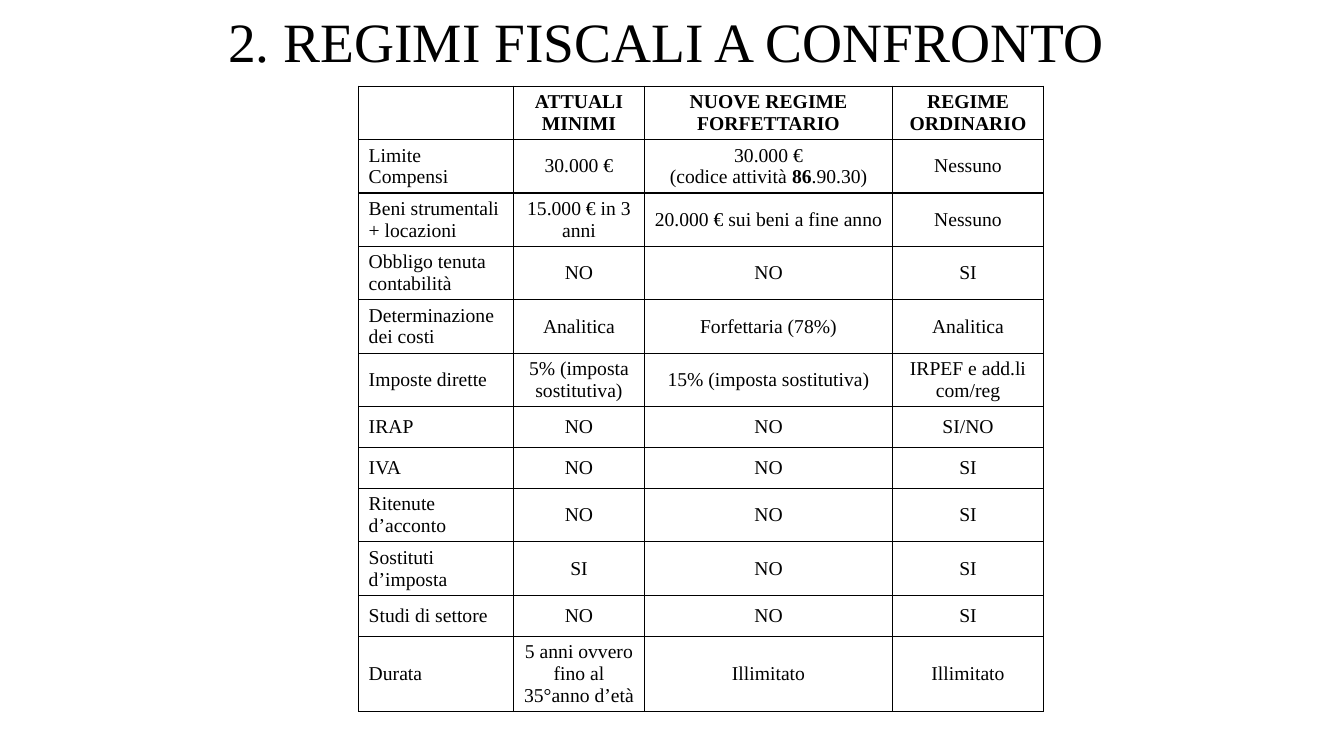
import lxml.etree
import pptx
import pptx.dml.color
import pptx.enum.text
import pptx.oxml.ns
import pptx.util

Pt = pptx.util.Pt
ALIGN = pptx.enum.text.PP_ALIGN
MIDDLE = pptx.enum.text.MSO_ANCHOR.MIDDLE
BLACK = pptx.dml.color.RGBColor(0x00, 0x00, 0x00)
WHITE = pptx.dml.color.RGBColor(0xFF, 0xFF, 0xFF)

HEADINGS = ["", "ATTUALI MINIMI", "NUOVE REGIME FORFETTARIO", "REGIME ORDINARIO"]
COMPARISON = [
    ["Limite Compensi", "30.000 €", "30.000 €\n(codice attività 86.90.30)", "Nessuno"],
    ["Beni strumentali + locazioni", "15.000 € in 3 anni",
     "20.000 € sui beni a fine anno", "Nessuno"],
    ["Obbligo tenuta contabilità", "NO", "NO", "SI"],
    ["Determinazione dei costi", "Analitica", "Forfettaria (78%)", "Analitica"],
    ["Imposte dirette", "5% (imposta sostitutiva)", "15% (imposta sostitutiva)",
     "IRPEF e add.li com/reg"],
    ["IRAP", "NO", "NO", "SI/NO"],
    ["IVA", "NO", "NO", "SI"],
    ["Ritenute d’acconto", "NO", "NO", "SI"],
    ["Sostituti d’imposta", "SI", "NO", "SI"],
    ["Studi di settore", "NO", "NO", "SI"],
    ["Durata", "5 anni ovvero fino al 35°anno d’età", "Illimitato", "Illimitato"],
]
BOLD_CODE = "86"
COLUMN_WIDTHS = [110.6, 93.6, 177.2, 107.8]
ONE_LINE, TWO_LINES, THREE_LINES = 29.3, 38.15, 53.6
ROW_HEIGHTS = ([TWO_LINES] * 6 + [ONE_LINE] * 2 + [TWO_LINES] * 2
               + [ONE_LINE, THREE_LINES])


class Deck:
    font_name = "Times New Roman"
    title_size = 39.6
    cell_size = 14
    cell_margin = 1.3
    border_width = 1

    def __init__(self, width, height):
        self.presentation = pptx.Presentation()
        self.presentation.slide_width = Pt(width)
        self.presentation.slide_height = Pt(height)
        self.slide = self.presentation.slides.add_slide(self.presentation.slide_layouts[6])

    def style(self, run, size, bold=False):
        run.font.name = self.font_name
        run.font.size = Pt(size)
        run.font.bold = bold
        run.font.color.rgb = BLACK

    def title(self, text, left, top, width, height):
        frame = self.slide.shapes.add_textbox(Pt(left), Pt(top), Pt(width), Pt(height)).text_frame
        frame.word_wrap = True
        frame.vertical_anchor = MIDDLE
        frame.text = text
        frame.paragraphs[0].line_spacing = 0.9
        self.style(frame.paragraphs[0].runs[0], self.title_size)

    def table(self, rows, left, top, column_widths, row_heights):
        table = self.slide.shapes.add_table(
            len(rows), len(column_widths), Pt(left), Pt(top),
            Pt(sum(column_widths)), Pt(sum(row_heights))).table
        table.horz_banding = False
        table.first_row = False
        for column, width in zip(table.columns, column_widths):
            column.width = Pt(width)
        for row_index, (row, height) in enumerate(zip(rows, row_heights)):
            table.rows[row_index].height = Pt(height)
            for column_index, text in enumerate(row):
                self.cell(table.cell(row_index, column_index), text,
                          heading=row_index == 0, centred=column_index > 0)

    def cell(self, cell, text, heading, centred):
        cell.text_frame.text = text
        cell.vertical_anchor = MIDDLE
        cell.margin_top = cell.margin_bottom = Pt(self.cell_margin)
        cell.fill.solid()
        cell.fill.fore_color.rgb = WHITE
        self.borders(cell)
        for paragraph in cell.text_frame.paragraphs:
            paragraph.alignment = ALIGN.CENTER if centred else ALIGN.LEFT
            self.embolden_code(paragraph)
            for run in paragraph.runs:
                self.style(run, self.cell_size, heading or run.text == BOLD_CODE)

    def embolden_code(self, paragraph):
        before, code, after = paragraph.text.partition(BOLD_CODE)
        if code:
            paragraph.runs[0].text = before
            for part in (code, after):
                paragraph.add_run().text = part

    def borders(self, cell):
        qn = pptx.oxml.ns.qn
        properties = cell._tc.get_or_add_tcPr()
        for position, side in enumerate(("a:lnL", "a:lnR", "a:lnT", "a:lnB")):
            line = lxml.etree.Element(qn(side), w=str(Pt(self.border_width)))
            fill = lxml.etree.SubElement(line, qn("a:solidFill"))
            lxml.etree.SubElement(fill, qn("a:srgbClr"), val=str(BLACK))
            properties.insert(position, line)

    def save(self):
        self.presentation.save("out.pptx")


def main():
    deck = Deck(960, 540)
    deck.title("2. REGIMI FISCALI A CONFRONTO", 156, -13.5, 648, 90)
    deck.table([HEADINGS] + COMPARISON, 256.2, 61.6, COLUMN_WIDTHS, ROW_HEIGHTS)
    deck.save()


if __name__ == "__main__":
    main()
